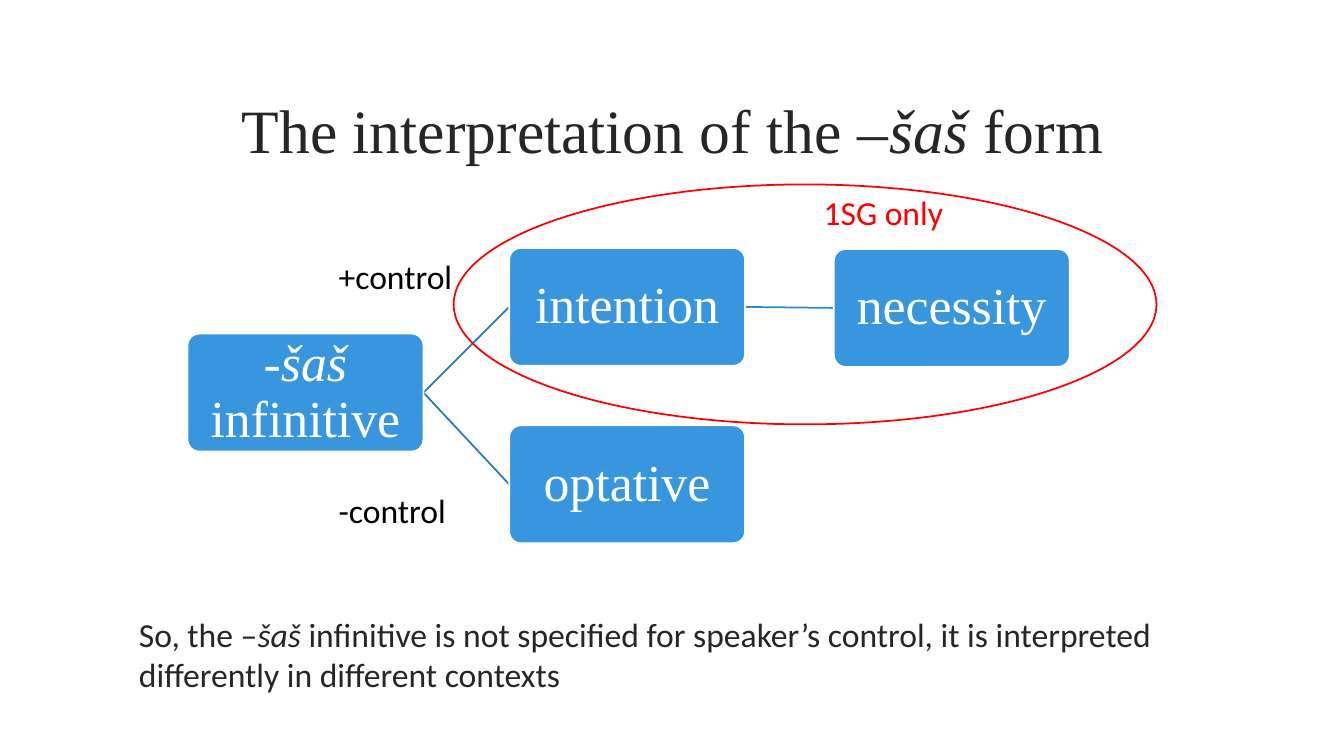
from dataclasses import dataclass

import pptx
import pptx.dml.color
import pptx.enum.shapes
import pptx.enum.text
import pptx.oxml
import pptx.oxml.ns
import pptx.util
from pptx.util import Inches

RGBColor = pptx.dml.color.RGBColor
WHITE = RGBColor(0xFF, 0xFF, 0xFF)
BLACK = RGBColor(0, 0, 0)
RED = RGBColor(0xFF, 0, 0)
DARK = RGBColor(0x26, 0x26, 0x26)
NODE_BLUE = RGBColor(0x37, 0x96, 0xDD)
BRANCH_BLUE = RGBColor(0x2C, 0x78, 0xB1)
LINK_BLUE = RGBColor(0x32, 0x88, 0xC9)

SERIF, SANS = "Times New Roman", "Calibri"
LINE_WIDTH = pptx.util.Pt(1.25)
NODE_WIDTH, NODE_HEIGHT = 2.34, 1.17
ALIGN = pptx.enum.text.PP_ALIGN
ANCHOR = pptx.enum.text.MSO_ANCHOR
SHAPE = pptx.enum.shapes.MSO_SHAPE


@dataclass
class Node:
    words: str
    left: float
    top: float

    @property
    def middle(self) -> float:
        return self.top + NODE_HEIGHT / 2


@dataclass
class Link:
    start: Node
    end: Node
    color: RGBColor


@dataclass
class Caption:
    words: str
    left: float
    top: float
    width: float
    height: float = 0.5
    size: float = 24
    font: str = SANS
    color: RGBColor = BLACK
    align: ALIGN = ALIGN.LEFT
    anchor: ANCHOR = ANCHOR.TOP


def apply_format(target, values: dict) -> None:
    for name, value in values.items():
        setattr(target, name, value)


def write_words(paragraph, words: str, font: str, size: float, color: RGBColor) -> None:
    """Words between asterisks are set in italics."""
    for position, part in enumerate(words.split("*")):
        if part:
            run = paragraph.add_run()
            run.text = part
            apply_format(run.font, {"name": font, "size": pptx.util.Pt(size),
                                    "italic": position % 2 == 1})
            run.font.color.rgb = color


def draw_caption(slide, caption: Caption) -> None:
    frame = slide.shapes.add_textbox(
        Inches(caption.left), Inches(caption.top),
        Inches(caption.width), Inches(caption.height)).text_frame
    apply_format(frame, {"word_wrap": True, "vertical_anchor": caption.anchor})
    paragraph = frame.paragraphs[0]
    paragraph.alignment = caption.align
    write_words(paragraph, caption.words, caption.font, caption.size, caption.color)


def draw_node(slide, node: Node) -> None:
    box = slide.shapes.add_shape(SHAPE.ROUNDED_RECTANGLE, Inches(node.left),
                                 Inches(node.top), Inches(NODE_WIDTH), Inches(NODE_HEIGHT))
    box.adjustments[0] = 0.1
    box.shadow.inherit = False
    box.fill.solid()
    box.fill.fore_color.rgb = NODE_BLUE
    box.line.color.rgb = WHITE
    box.line.width = LINE_WIDTH
    margins = {f"margin_{side}": Inches(0.03) for side in ("left", "right", "top", "bottom")}
    apply_format(box.text_frame, {"word_wrap": True, "vertical_anchor": ANCHOR.MIDDLE, **margins})
    paragraph = box.text_frame.paragraphs[0]
    apply_format(paragraph, {"alignment": ALIGN.CENTER, "line_spacing": 0.9})
    write_words(paragraph, node.words, SERIF, 37, WHITE)


def draw_link(slide, link: Link) -> None:
    line = slide.shapes.add_connector(
        pptx.enum.shapes.MSO_CONNECTOR.STRAIGHT,
        Inches(link.start.left + NODE_WIDTH), Inches(link.start.middle),
        Inches(link.end.left), Inches(link.end.middle))
    line.line.color.rgb = link.color
    line.line.width = LINE_WIDTH
    line._element.spPr.append(pptx.oxml.parse_xml(
        f"<a:effectLst {pptx.oxml.ns.nsdecls('a')}/>"))


def draw_scope(slide) -> None:
    scope = slide.shapes.add_shape(SHAPE.OVAL, Inches(4.5), Inches(1.83),
                                   Inches(6.97), Inches(2.38))
    scope.shadow.inherit = False
    scope.fill.background()
    scope.line.color.rgb = RED
    scope.line.width = LINE_WIDTH


# Content
infinitive = Node("-*šaš* infinitive", 1.86, 3.31)
intention = Node("intention", 5.05, 2.46)
necessity = Node("necessity", 8.27, 2.47)
optative = Node("optative", 5.05, 4.22)
LINKS = [Link(infinitive, intention, BRANCH_BLUE),
         Link(intention, necessity, LINK_BLUE),
         Link(infinitive, optative, BRANCH_BLUE)]
HEADING = Caption("The interpretation of the –*šaš* form", 1.42, 0.56, 10.5, 1.43,
                  44, SERIF, DARK, ALIGN.CENTER, ANCHOR.MIDDLE)
CONCLUSION = Caption("So, the –*šaš* infinitive is not specified for speaker’s control, "
                     "it is interpreted differently in different contexts",
                     1.28, 6.04, 11.09, 1.2, color=DARK)
LABELS = [Caption("+control", 3.26, 2.49, 1.98),
          Caption("-control", 3.26, 4.81, 1.98),
          Caption("1SG only", 8.07, 1.85, 1.9, color=RED)]


def main() -> None:
    deck = pptx.Presentation()
    apply_format(deck, {"slide_width": Inches(13.33), "slide_height": Inches(7.5)})
    slide = deck.slides.add_slide(deck.slide_layouts[6])

    # Heading and conclusion
    for caption in (HEADING, CONCLUSION):
        draw_caption(slide, caption)

    # Tree of meanings
    for link in LINKS:
        draw_link(slide, link)
    for node in (infinitive, intention, necessity, optative):
        draw_node(slide, node)

    # First-person scope and labels
    draw_scope(slide)
    for label in LABELS:
        draw_caption(slide, label)

    deck.save("out.pptx")


if __name__ == "__main__":
    main()
